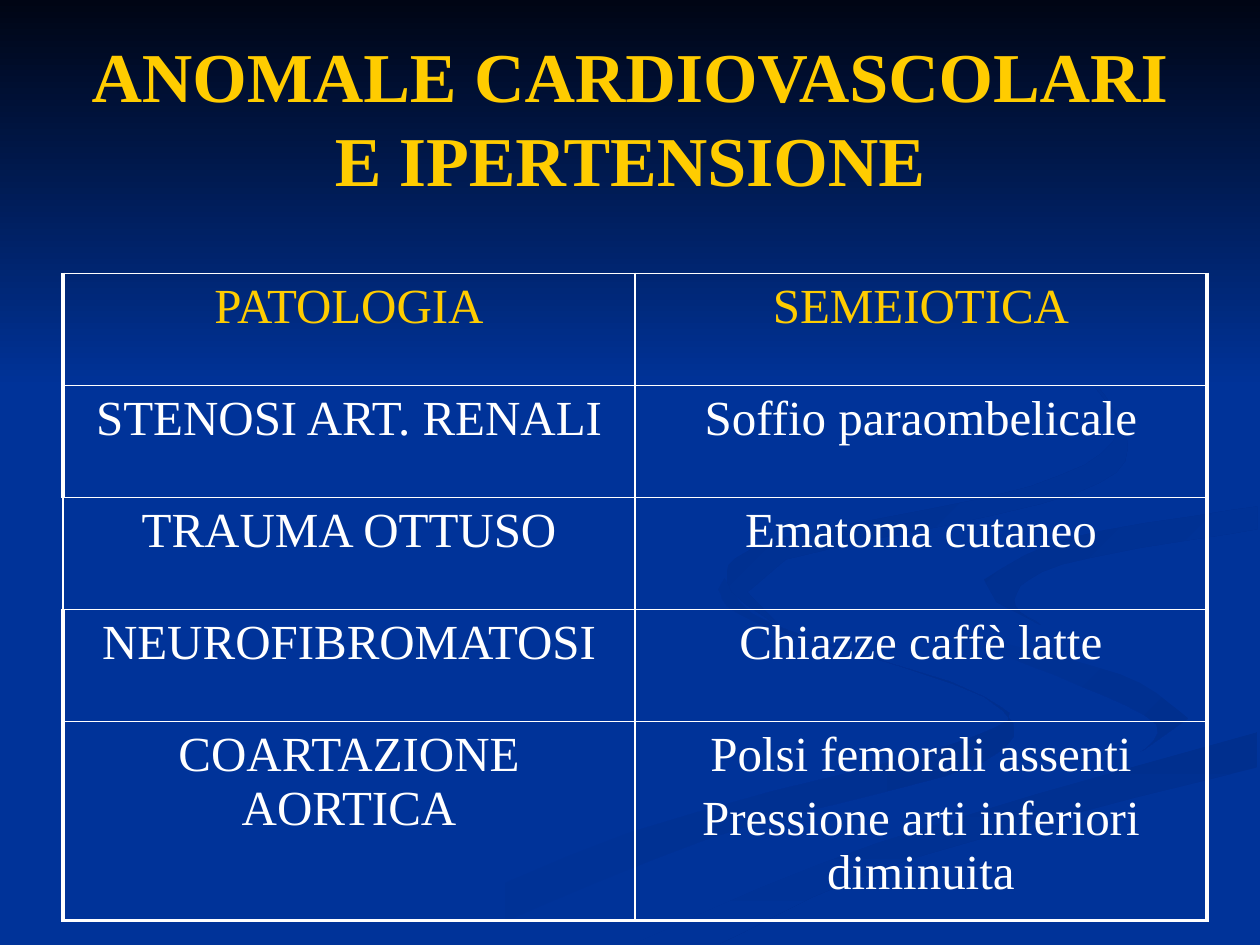
from dataclasses import dataclass

from lxml import etree
from pptx import Presentation
from pptx.dml.color import RGBColor
from pptx.enum.shapes import MSO_SHAPE
from pptx.enum.text import MSO_ANCHOR, PP_ALIGN
from pptx.oxml.ns import qn
from pptx.shapes.autoshape import Shape
from pptx.slide import Slide
from pptx.table import _Cell
from pptx.util import Cm, Pt

CENTER = PP_ALIGN.CENTER
MIDDLE = MSO_ANCHOR.MIDDLE
TOP = MSO_ANCHOR.TOP
RECTANGLE = MSO_SHAPE.RECTANGLE

Edge = list[tuple[float, float]]


@dataclass(frozen=True)
class Theme:
    font: str = "Times New Roman"
    title_size: int = 40
    cell_size: int = 28
    paragraph_gap: float = 5.6
    thin: float = 1
    thick: float = 2.25
    background: str = "003399"
    shade: str = "002F8E"
    night: str = "000514"
    accent: str = "FFCC00"
    text: str = "FFFFFF"


@dataclass(frozen=True)
class Ribbon:
    edges: list[Edge]
    start: str
    end: str
    angle: int = 45  # clockwise, in degrees


THEME = Theme()
GRID = Cm(0.0254)  # unit of the ribbon coordinates
STEPS = 5  # straight pieces between two points of an edge

# Edges shared by neighbouring ribbons
BEND = [(724, 464), (775, 503), (889, 535), (943, 570)]
SWEEP = [(503, 749), (696, 669), (998, 581)]
CREST = [(781, 460), (849, 427), (998, 402)]

# Background ribbons, from back to front
RIBBONS = [
    Ribbon([[(575, 459), (614, 496), (781, 553), (767, 587), (499, 661), (300, 749)],
            [(361, 749), (564, 665), (780, 605), (781, 553), (602, 495), (570, 468)]],
           THEME.background, THEME.shade, 0),
    Ribbon([BEND, [(894, 605), (918, 575), (838, 536), (746, 500), (724, 464)]],
           THEME.background, THEME.shade),
    Ribbon([SWEEP, [(998, 609), (722, 682), (571, 749)]],
           THEME.shade, THEME.background, 90),
    Ribbon([BEND, [(931, 590), (743, 643), (477, 749)],
            SWEEP, [(998, 538), (848, 503), (784, 469)],
            CREST, [(998, 387), (808, 417), (724, 464)]],
           THEME.background, THEME.background),
    Ribbon([CREST, [(998, 420), (843, 448), (805, 476), (826, 496)], [(791, 478)]],
           THEME.shade, THEME.background),
    Ribbon([[(683, 430), (855, 391), (894, 344), (821, 261), (762, 233)],
            [(846, 279), (888, 341), (818, 386), (615, 429), (577, 462), (622, 500)],
            [(593, 470), (624, 444)]],
           THEME.shade, THEME.background),
]

ROWS = [
    ("PATOLOGIA", "SEMEIOTICA"),
    ("STENOSI ART. RENALI", "Soffio paraombelicale"),
    ("TRAUMA OTTUSO", "Ematoma cutaneo"),
    ("NEUROFIBROMATOSI", "Chiazze caffè latte"),
    ("COARTAZIONE AORTICA",
     "Polsi femorali assenti\nPressione arti inferiori diminuita"),
]
THIN_LEFT_ROW = 2
COLUMN_WIDTH, ROW_HEIGHT, LAST_ROW_HEIGHT = Cm(11.53), Cm(2.26), Cm(3.73)


def smooth(edge: Edge) -> Edge:
    """Run a Catmull-Rom curve through the points of an edge."""
    padded = [edge[0], *edge, edge[-1]]
    curve = []
    for a, b, c, d in zip(padded, padded[1:], padded[2:], padded[3:]):
        for t in (step / STEPS for step in range(STEPS)):
            curve.append(tuple(
                q + t * (r - p + t * (2 * p - 5 * q + 4 * r - s
                                      + t * (3 * (q - r) + s - p))) / 2
                for p, q, r, s in zip(a, b, c, d)))
    return curve + [edge[-1]]


def fill_gradient(sp: Shape, start: str, end: str, angle: int) -> None:
    sp.shadow.inherit = False
    sp.line.fill.background()
    sp.fill.gradient()
    sp.fill.gradient_angle = 360 - angle
    for stop, color in zip(sp.fill.gradient_stops, (start, end)):
        stop.color.rgb = RGBColor.from_string(color)


def draw_ribbon(s: Slide, ribbon: Ribbon) -> None:
    points = [point for edge in ribbon.edges for point in smooth(edge)]
    builder = s.shapes.build_freeform(*points[0], scale=GRID)
    builder.add_line_segments(points[1:], close=True)
    fill_gradient(builder.convert_to_shape(), ribbon.start, ribbon.end, ribbon.angle)


def style_text(tf, size: int, color: str, bold: bool = False) -> None:
    for i, p in enumerate(tf.paragraphs):
        p.alignment = CENTER
        if i:
            p.space_before = Pt(THEME.paragraph_gap)
        for r in p.runs:
            r.font.name = THEME.font
            r.font.size = Pt(size)
            r.font.bold = bold
            r.font.color.rgb = RGBColor.from_string(color)


def set_borders(cell: _Cell, widths: dict[str, float]) -> None:
    tc_pr = cell._tc.get_or_add_tcPr()
    for i, (side, width) in enumerate(widths.items()):
        ln = etree.Element(qn(f"a:ln{side}"), w=str(Pt(width)))
        fill = etree.SubElement(ln, qn("a:solidFill"))
        etree.SubElement(fill, qn("a:srgbClr"), val=THEME.text)
        tc_pr.insert(i, ln)


def draw_title(s: Slide, text: str) -> None:
    tf = s.shapes.add_textbox(Cm(1.27), Cm(0.76), Cm(22.86), Cm(3.18)).text_frame
    tf.word_wrap = True
    tf.vertical_anchor = MIDDLE
    tf.text = text
    style_text(tf, THEME.title_size, THEME.accent, bold=True)


def draw_table(s: Slide) -> None:
    last_row, last_col = len(ROWS) - 1, len(ROWS[0]) - 1
    table = s.shapes.add_table(
        len(ROWS), len(ROWS[0]), Cm(1.27), Cm(5.51), COLUMN_WIDTH * len(ROWS[0]),
        ROW_HEIGHT * last_row + LAST_ROW_HEIGHT).table
    table.first_row = table.horz_banding = False
    for column in table.columns:
        column.width = COLUMN_WIDTH
    for i, texts in enumerate(ROWS):
        table.rows[i].height = LAST_ROW_HEIGHT if i == last_row else ROW_HEIGHT
        for j, text in enumerate(texts):
            cell = table.cell(i, j)
            cell.text_frame.text = text
            cell.vertical_anchor = TOP
            cell.fill.background()
            style_text(cell.text_frame, THEME.cell_size,
                       THEME.text if i else THEME.accent)
            thick_sides = {"L": j == 0 and i != THIN_LEFT_ROW, "R": j == last_col,
                           "T": False, "B": i == last_row}
            set_borders(cell, {side: THEME.thick if thick else THEME.thin
                               for side, thick in thick_sides.items()})


def main() -> None:
    prs = Presentation()
    prs.slide_width, prs.slide_height = Cm(25.4), Cm(19.05)
    s = prs.slides.add_slide(prs.slide_layouts[6])

    # Background
    s.background.fill.solid()
    s.background.fill.fore_color.rgb = RGBColor.from_string(THEME.background)
    for ribbon in RIBBONS:
        draw_ribbon(s, ribbon)
    band = s.shapes.add_shape(RECTANGLE, 0, 0, prs.slide_width, Cm(7.82))
    fill_gradient(band, THEME.night, THEME.background, 90)

    # Content
    draw_title(s, "ANOMALE CARDIOVASCOLARI E IPERTENSIONE")
    draw_table(s)
    prs.save("out.pptx")


if __name__ == "__main__":
    main()
